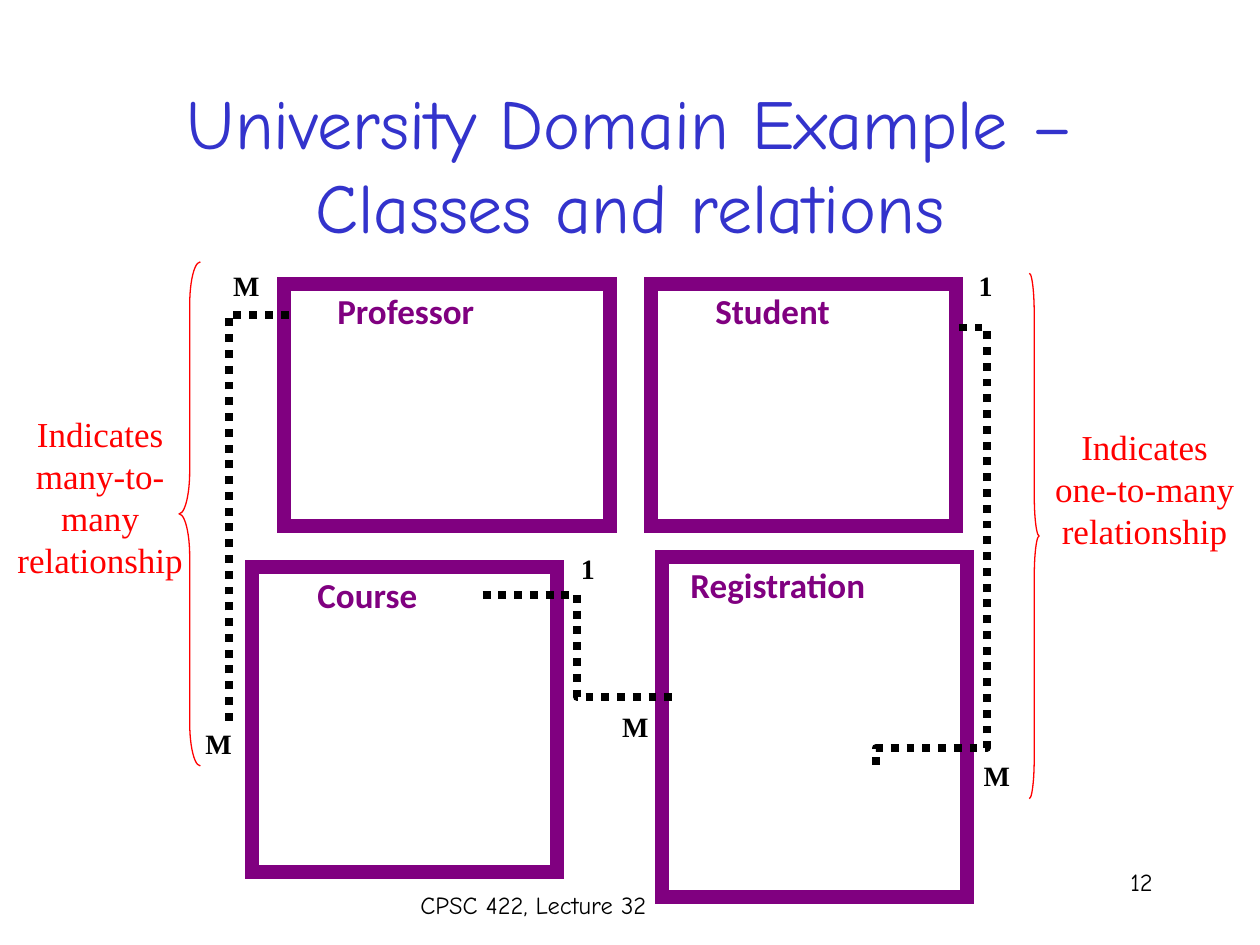
from lxml import etree
from pptx import Presentation
from pptx.dml.color import RGBColor
from pptx.enum.dml import MSO_LINE
from pptx.enum.shapes import MSO_CONNECTOR, MSO_SHAPE
from pptx.enum.text import MSO_ANCHOR, PP_ALIGN
from pptx.oxml.ns import qn
from pptx.util import Cm, Pt

RECT, LEFT_BRACE, RIGHT_BRACE = MSO_SHAPE.RECTANGLE, MSO_SHAPE.LEFT_BRACE, MSO_SHAPE.RIGHT_BRACE
ELBOW, DOTS = MSO_CONNECTOR.ELBOW, MSO_LINE.ROUND_DOT
LEFT, CENTER, RIGHT = PP_ALIGN.LEFT, PP_ALIGN.CENTER, PP_ALIGN.RIGHT
TOP, MIDDLE = MSO_ANCHOR.TOP, MSO_ANCHOR.MIDDLE

THEME = {
    "white": RGBColor(255, 255, 255),
    "purple": RGBColor(128, 0, 128),
    "title": ("Comic Neue", 40, RGBColor(51, 51, 204), False),
    "class": ("Calibri", 20, RGBColor(128, 0, 128), True),
    "mark": ("Times New Roman", 16, RGBColor(0, 0, 0), True),
    "note": ("Times New Roman", 20, RGBColor(255, 0, 0), False),
    "footer": ("Comic Neue", 14, RGBColor(0, 0, 0), False),
    "red": RGBColor(255, 0, 0),
    "black": RGBColor(0, 0, 0),
}


def add_text(shapes, box, lines, style, align=LEFT, wrap=True, anchor=TOP):
    tf = shapes.add_textbox(*map(Cm, box)).text_frame
    tf.word_wrap = wrap
    tf.vertical_anchor = anchor
    for i, line in enumerate(lines):
        p = tf.add_paragraph() if i else tf.paragraphs[0]
        p.alignment = align
        r = p.add_run()
        r.text = line
        r.font.name, size, r.font.color.rgb, r.font.bold = THEME[style]
        r.font.size = Pt(size)


prs = Presentation()
prs.slide_width, prs.slide_height = Cm(25.4), Cm(19.05)
s = prs.slides.add_slide(prs.slide_layouts[6])

classes = [
    ("Course", (5.08, 11.43, 6.15, 6.15), 6.15, 3.61),
    ("Registration", (13.34, 11.23, 6.15, 6.86), 13.67, 5.51),
    ("Student", (13.13, 5.72, 6.15, 4.88), 14.17, 3.96),
    ("Professor", (5.72, 5.72, 6.58, 4.88), 6.55, 4.65),
]
for name, box, label_left, label_width in classes:
    sp = s.shapes.add_shape(RECT, *map(Cm, box))
    sp.shadow.inherit = False
    sp.fill.solid()
    sp.fill.fore_color.rgb = THEME["white"]
    sp.line.color.rgb = THEME["purple"]
    sp.line.width = Pt(8)
    etree.SubElement(sp.line._get_or_add_ln(), qn("a:miter"), lim="800000")
    add_text(s.shapes, (label_left, box[1], label_width, 1.12), [name], "class")

add_text(s.shapes, (1.9, 1.7, 21.6, 3.18), ["University Domain Example – Classes and relations"],
         "title", CENTER, anchor=MIDDLE)

relations = [
    ((9.73, 11.99, 13.54, 14.05), "bentConnector3", 0, [50000]),
    ((22.86, 11.81, 14.05, 10.21), "bentConnector4", 90, [3800, 139700]),
    ((9.37, 11.1, 1.19, 9.78), "bentConnector2", 90, []),
]
for ends, preset, angle, adjustments in relations:
    line = s.shapes.add_connector(ELBOW, *map(Cm, ends))
    line.line.color.rgb = THEME["black"]
    line.line.width = Pt(4.5)
    line.line.dash_style = DOTS
    props = line._element.spPr
    etree.SubElement(props, qn("a:effectLst"))
    props.find(qn("a:xfrm")).set("rot", str(angle * 60000))
    geom = props.find(qn("a:prstGeom"))
    geom.set("prst", preset)
    guides = geom.find(qn("a:avLst"))
    for i, value in enumerate(adjustments, 1):
        etree.SubElement(guides, qn("a:gd"), name=f"adj{i}", fmla=f"val {value}")

marks = [
    ("M", 4.45, 5.28), ("M", 3.89, 14.53), ("M", 12.29, 14.17),
    ("1", 11.46, 11), ("M", 19.58, 15.16), ("1", 19.48, 5.28),
]
for mark, left, top in marks:
    width = 1.04 if mark == "M" else 0.79
    add_text(s.shapes, (left, top, width, 0.94), [mark], "mark", wrap=False)

notes = [
    ("many-to-many", (0, 8.2, 4.04, 3.63), LEFT_BRACE, (3.61, 5.28, 0.43, 10.16), 2),
    ("one-to-many", (20.75, 8.46, 4.65, 2.82), RIGHT_BRACE, (20.75, 5.51, 0.2, 10.59), 4.17),
]
for kind, box, brace, brace_box, curl in notes:
    group = s.shapes.add_group_shape()
    add_text(group.shapes, box, ["Indicates", kind, "relationship"], "note", CENTER)
    sp = group.shapes.add_shape(brace, *map(Cm, brace_box))
    sp.shadow.inherit = False
    sp.adjustments[0] = curl
    sp.fill.background()
    sp.line.color.rgb = THEME["red"]
    sp.line.width = Pt(0.75)

add_text(s.shapes, (6.73, 17.81, 8.05, 1.27), ["CPSC 422, Lecture 32"], "footer", CENTER)
add_text(s.shapes, (18.21, 17.35, 5.28, 1.27), ["12"], "footer", RIGHT)

prs.save("out.pptx")
